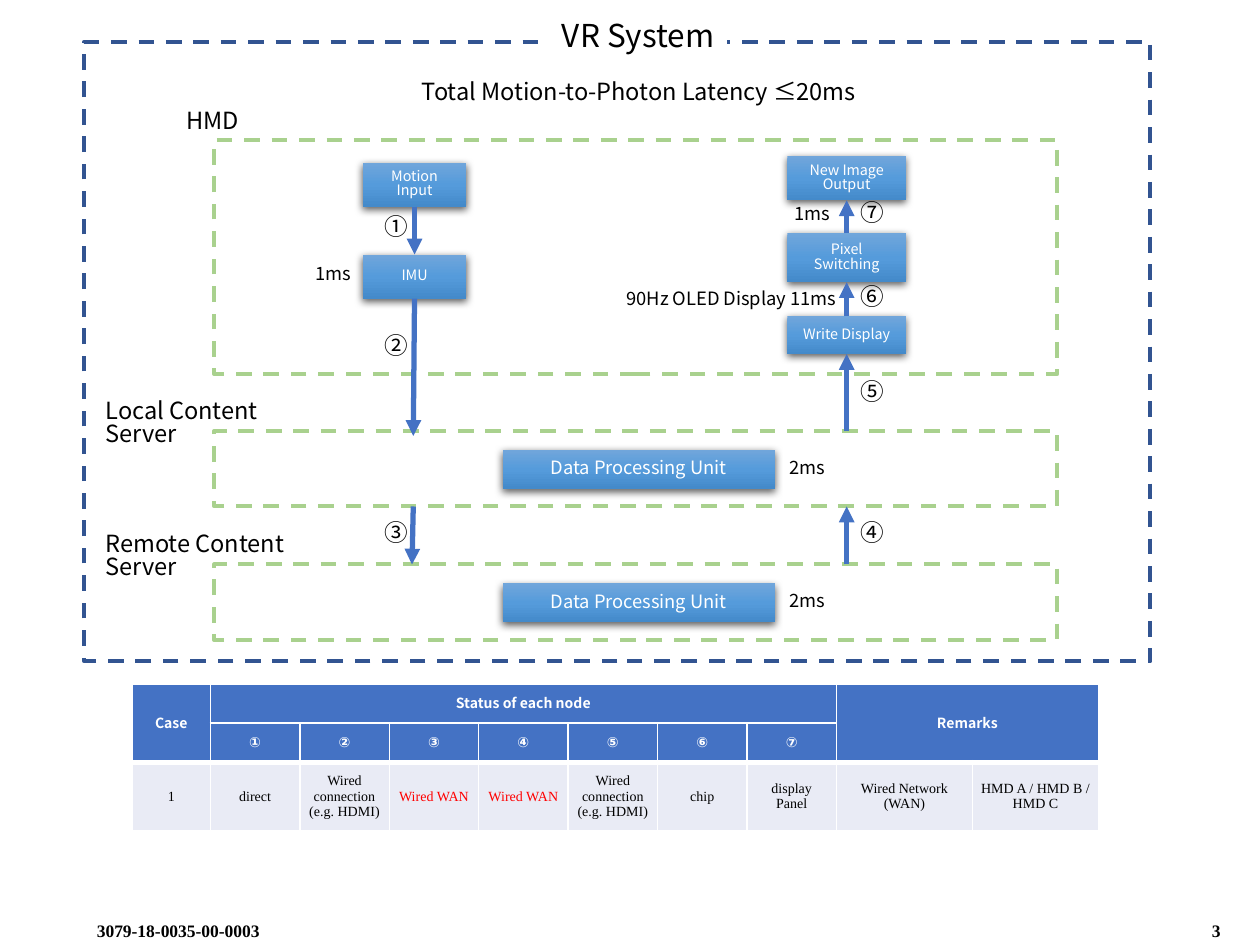
from dataclasses import dataclass

from lxml import etree
from pptx import Presentation
from pptx.dml.color import RGBColor
from pptx.enum import dml, shapes, text
from pptx.oxml import ns, parse_xml
from pptx.util import Inches, Pt


@dataclass(frozen=True)
class Theme:
    sans: str = "Noto Sans CJK KR"
    serif: str = "Times New Roman"
    symbol: str = "DejaVu Sans"
    black: str = "000000"
    white: str = "FFFFFF"
    red: str = "FF0000"
    blue: str = "4472C4"
    system: str = "325491"
    region: str = "A9D18E"
    body: str = "E9EBF5"
    node: tuple = ("71A6DB", "559BDB", "448ACA")
    title: float = 18
    label: float = 13.5
    note: float = 10.5
    small: float = 8.2
    table: float = 8
    footer: float = 10
    tight: float = 0.82


T = Theme()
A = ns.nsdecls("a")
CENTER = text.PP_ALIGN.CENTER


def write(frame, words, size=T.label, font=T.sans, color=T.black, bold=False,
          align=None, wrap=True):
    """Fill a text frame: newline starts a paragraph, vertical tab a line."""
    frame.word_wrap = wrap
    frame.text = words
    for paragraph in frame.paragraphs:
        paragraph.alignment = align
        if font == T.sans:
            paragraph.line_spacing = T.tight
        for run in paragraph.runs:
            run.font.size, run.font.name, run.font.bold = Pt(size), font, bold
            run.font.color.rgb = RGBColor.from_string(color)
            east_asian = etree.SubElement(run.font._element, ns.qn("a:ea"))
            east_asian.set("typeface", font)


def label(slide, x, y, w, h, words, **style):
    box = slide.shapes.add_textbox(*map(Inches, (x, y, w, h)))
    write(box.text_frame, words, **style)


def rectangle(slide, x, y, w, h):
    shape = slide.shapes.add_shape(shapes.MSO_SHAPE.RECTANGLE,
                                   *map(Inches, (x, y, w, h)))
    shape.shadow.inherit = False
    return shape


def dashed_frame(slide, box, color):
    frame = rectangle(slide, *box)
    frame.fill.background()
    frame.line.color.rgb = RGBColor.from_string(color)
    frame.line.width = Pt(2.25)
    frame.line.dash_style = dml.MSO_LINE.DASH


def node(slide, x, y, w, h, words, size=T.small):
    """Raised gradient box with centred white text."""
    shape = rectangle(slide, x, y, w, h)
    shape.line.fill.background()
    stops = "".join(f'<a:gs pos="{i * 50000}"><a:srgbClr val="{c}"/></a:gs>'
                    for i, c in enumerate(T.node))
    properties = shape._element.spPr
    properties.find(ns.qn("a:prstGeom")).addnext(parse_xml(
        f'<a:gradFill {A}><a:gsLst>{stops}</a:gsLst><a:lin ang="5400000"/></a:gradFill>'))
    properties.find(ns.qn("a:effectLst")).append(parse_xml(
        f'<a:outerShdw {A} blurRad="57150" dist="19050" dir="5400000">'
        f'<a:srgbClr val="{T.black}"><a:alpha val="63000"/></a:srgbClr></a:outerShdw>'))
    shape.text_frame.vertical_anchor = text.MSO_ANCHOR.MIDDLE
    write(shape.text_frame, words, size=size, color=T.white, align=CENTER)
    return shape


def arrow(slide, start, end):
    """Join two ends, each an (x, y) point or a (node, side) pair."""
    ends = [(0, 0) if hasattr(e[0], "text_frame") else e for e in (start, end)]
    line = slide.shapes.add_connector(shapes.MSO_CONNECTOR.STRAIGHT,
                                      *(Inches(v) for e in ends for v in e))
    for point, connect in ((start, line.begin_connect), (end, line.end_connect)):
        if hasattr(point[0], "text_frame"):
            connect(*point)
    line.line.color.rgb = RGBColor.from_string(T.blue)
    line.line.width = Pt(3)
    etree.SubElement(line.line._get_or_add_ln(), ns.qn("a:tailEnd")).set("type", "triangle")
    etree.SubElement(line._element.spPr, ns.qn("a:effectLst"))


def system(slide, box):
    x, y, w, h = box
    dashed_frame(slide, box, T.system)
    title = rectangle(slide, x + 3.69, y - 0.2, 1.41, 0.4)
    title.fill.solid()
    title.fill.fore_color.rgb = RGBColor.from_string(T.white)
    title.line.fill.background()
    title.text_frame.vertical_anchor = text.MSO_ANCHOR.TOP
    write(title.text_frame, "VR System", size=T.title, align=CENTER, wrap=False)
    label(slide, x + 2.15, y + 0.27, 4.5, 0.33,
          "Total Motion-to-Photon Latency ≤20ms", align=CENTER)


def headset(slide, box):
    """Draw the HMD region; return the nodes that face the servers."""
    x, y, w, h = box
    dashed_frame(slide, box, T.region)
    label(slide, x - 0.32, y - 0.28, 0.65, 0.33, "HMD", wrap=False)
    motion = node(slide, x + 1.18, y + 0.18, 0.82, 0.35, "Motion\nInput")
    imu = node(slide, x + 1.18, y + 0.91, 0.82, 0.35, "IMU")
    display = node(slide, x + 4.55, y + 1.4, 0.94, 0.3, "Write Display")
    pixel = node(slide, x + 4.55, y + 0.74, 0.94, 0.39, "Pixel\nSwitching")
    output = node(slide, x + 4.55, y + 0.13, 0.94, 0.35, "New Image\nOutput")
    arrow(slide, (motion, 2), (imu, 0))
    arrow(slide, (display, 0), (pixel, 2))
    arrow(slide, (pixel, 0), (output, 2))
    note = dict(size=T.note, align=CENTER)
    label(slide, x + 0.58, y + 0.95, 0.73, 0.28, "1ms", **note)
    label(slide, x + 4.38, y + 0.48, 0.73, 0.28, "1ms", **note)
    label(slide, x + 3.16, y + 1.15, 1.89, 0.28, "90Hz OLED Display 11ms",
          wrap=False, **note)
    return imu, display


def server(slide, box, name):
    x, y, w, h = box
    dashed_frame(slide, box, T.region)
    label(slide, x - 0.96, y - 0.29, 2.21, 0.33, name, wrap=False)
    node(slide, x + 2.29, y + 0.15, 2.16, 0.31, "Data Processing Unit", size=T.note)
    label(slide, x + 4.45, y + 0.18, 0.52, 0.28, "2ms", size=T.note, align=CENTER)


def links(slide, imu, display, local, remote):
    """Arrows between regions, and the numbers of all seven steps."""
    down, up = 3.28, 6.72
    local_bottom = local[1] + local[3]
    arrow(slide, (imu, 2), (down, local[1] + 0.04))
    arrow(slide, (down, local_bottom), (down - 0.01, remote[1]))
    arrow(slide, (up, remote[1]), (up, local_bottom))
    arrow(slide, (up, local[1]), (display, 2))
    steps = [("①", 1.67), ("②", 2.62), ("③", 4.1), ("④", 4.1),
             ("⑤", 2.98), ("⑥", 2.23), ("⑦", 1.56)]
    for i, (number, y) in enumerate(steps):
        label(slide, 2.95 if i < 3 else 6.73, y, 0.39, 0.33, number, wrap=False)


def table_cell(cell, words, fill, top=1, bottom=1, margins=(0.07, 0.04), **style):
    cell.margin_left = cell.margin_right = Inches(margins[0])
    cell.margin_top = cell.margin_bottom = Inches(margins[1])
    cell.vertical_anchor = text.MSO_ANCHOR.MIDDLE
    for side, width in (("L", 1), ("R", 1), ("T", top), ("B", bottom)):
        cell._tc.get_or_add_tcPr().append(parse_xml(
            f'<a:ln{side} {A} w="{Pt(width)}"><a:solidFill>'
            f'<a:srgbClr val="{T.white}"/></a:solidFill></a:ln{side}>'))
    cell.fill.solid()
    cell.fill.fore_color.rgb = RGBColor.from_string(fill)
    write(cell.text_frame, words, size=T.table, align=CENTER, **style)


def case_table(slide, box):
    widths = [0.62] + [0.71] * 7 + [1.08, 1]
    table = slide.shapes.add_table(3, len(widths), *map(Inches, box)).table
    table.first_row = table.horz_banding = False
    for column, width in zip(table.columns, widths):
        column.width = Inches(width)
    for row, height in zip(table.rows, (0.31, 0.31, 0.54)):
        row.height = Inches(height)

    wired = "Wired connection\n(e.g. HDMI)"
    rows = [
        ["Case", "Status of each node"] + [""] * 6 + ["Remarks", ""],
        ["", *"①②③④⑤⑥⑦", "", ""],
        ["1", "direct", wired, "Wired WAN", "Wired WAN", wired, "chip",
         "display\nPanel", "Wired Network\n(WAN)", "HMD A / HMD B /\nHMD C"],
    ]
    for c, words in enumerate(rows[0]):
        table_cell(table.cell(0, c), words, T.blue, bottom=1 if 0 < c < 8 else 3,
                   color=T.white, bold=True)
    for c, words in enumerate(rows[1]):
        table_cell(table.cell(1, c), words, T.blue, bottom=3, font=T.symbol,
                   color=T.white, bold=True)
    for c, words in enumerate(rows[2]):
        table_cell(table.cell(2, c), words, T.body, top=3, font=T.serif,
                   color=T.red if words == "Wired WAN" else T.black,
                   margins=(0.05, 0.01) if c > 7 else (0.07, 0.04))
    for first, last in (((0, 0), (1, 0)), ((0, 1), (0, 7)), ((0, 8), (1, 9))):
        table.cell(*first).merge(table.cell(*last))


def footer(slide, box):
    x, y, w, h = box
    style = dict(size=T.footer, font=T.serif, bold=True)
    label(slide, x, y, 5.25, h, "3079-18-0035-00-0003", **style)
    label(slide, x + w - 0.48, y, 0.48, h, "3", **style)


def main():
    deck = Presentation()
    deck.slide_width, deck.slide_height = Inches(10), Inches(7.5)
    slide = deck.slides.add_slide(deck.slide_layouts[6])
    local, remote = (1.7, 3.42, 6.69, 0.6), (1.7, 4.48, 6.69, 0.6)
    footer(slide, (0.67, 7.25, 9.33, 0.25))
    system(slide, (0.67, 0.33, 8.46, 4.92))
    imu, display = headset(slide, (1.7, 1.11, 6.69, 1.86))
    server(slide, local, "Local Content\vServer")
    server(slide, remote, "Remote Content\vServer")
    links(slide, imu, display, local, remote)
    case_table(slide, (1.05, 5.43, 7.67, 1.15))
    deck.save("out.pptx")


if __name__ == "__main__":
    main()
